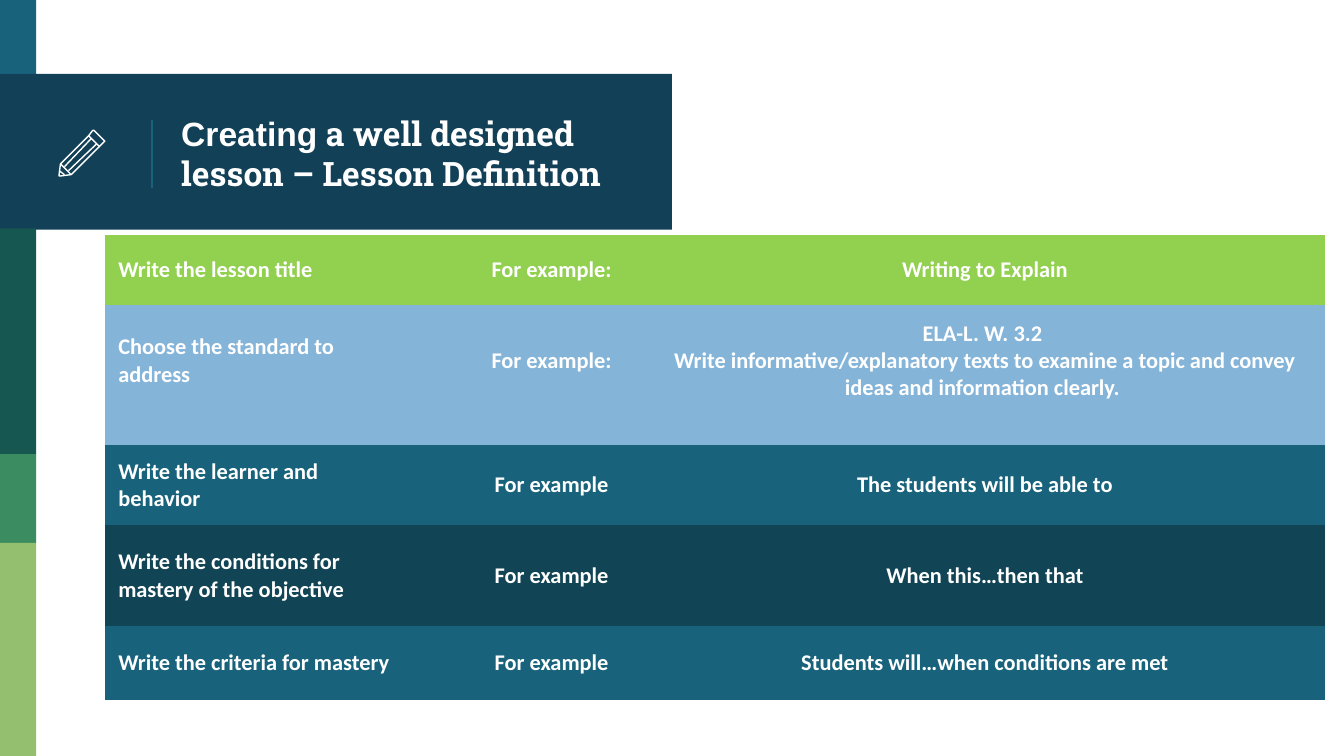
import pptx
import pptx.dml.color
import pptx.enum.shapes
import pptx.enum.text
import pptx.oxml.ns
import pptx.util
from lxml import etree

Inches = pptx.util.Inches
Pt = pptx.util.Pt
RGB = pptx.dml.color.RGBColor.from_string
qn = pptx.oxml.ns.qn
MIDDLE = pptx.enum.text.MSO_ANCHOR.MIDDLE
COLORS = {
    "white": "FFFFFF", "navy": "124057", "teal": "18637B", "pine": "165751",
    "green": "3B8D61", "sage": "94BF6E", "lime": "92D050", "sky": "85B4D9",
    "ink": "114454",
}

# Widescreen page, 16:9
deck = pptx.Presentation()
deck.slide_width = Inches(10)
deck.slide_height = Inches(10 * 9 / 16)
slide = deck.slides.add_slide(deck.slide_layouts[6])


def add_run(paragraph, text, font_name, size):
    run = paragraph.add_run()
    run.text = text
    for attribute, value in {"name": font_name, "size": Pt(size), "bold": True}.items():
        setattr(run.font, attribute, value)
    run.font.color.rgb = RGB(COLORS["white"])


def add_stroke(x1, y1, x2, y2, color):
    stroke = slide.shapes.add_connector(
        pptx.enum.shapes.MSO_CONNECTOR.STRAIGHT,
        Inches(x1), Inches(y1), Inches(x2), Inches(y2))
    stroke.line.color.rgb = RGB(COLORS[color])
    stroke.line.width = Pt(0.75)
    etree.SubElement(stroke.element.spPr, qn("a:effectLst"))


# Side stripe and title band: top, width, height, colour
for top, width, height, color in [
    (0, 0.27, 0.58, "teal"),
    (0.55, 5, 1.16, "navy"),
    (1.7, 0.27, 1.68, "pine"),
    (3.38, 0.27, 0.66, "green"),
    (4.04, 0.27, 1.59, "sage"),
]:
    band = slide.shapes.add_shape(
        pptx.enum.shapes.MSO_SHAPE.RECTANGLE,
        0, Inches(top), Inches(width), Inches(height))
    band.shadow.inherit = False
    band.fill.solid()
    band.fill.fore_color.rgb = RGB(COLORS[color])
    band.line.fill.background()

add_stroke(1.13, 0.89, 1.13, 1.4, "teal")

# Title
title = slide.shapes.add_textbox(Inches(1.25), Inches(0.58), Inches(3.51), Inches(1.12))
title_format = {"word_wrap": True, "vertical_anchor": MIDDLE}
for side in ("left", "right", "top", "bottom"):
    title_format[f"margin_{side}"] = Inches(0.1)
for attribute, value in title_format.items():
    setattr(title.text_frame, attribute, value)
heading = title.text_frame.paragraphs[0]
add_run(heading, "Creating", "Arial", 18)
add_run(heading, " a well designed lesson – Lesson Definition", "Roboto Slab", 18)

# Lesson table: height, colour, step, prompt, example paragraphs
lesson_rows = [
    (0.52, "lime", "Write the lesson title", "For example:", ["Writing to Explain"]),
    (1.04, "sky", "Choose the standard to address", "For example:",
     ["ELA-L. W. 3.2 ",
      "Write informative/explanatory texts to examine a topic and convey "
      "ideas and information clearly. "]),
    (0.6, "teal", "Write the learner and behavior", "For example",
     ["The students will be able to"]),
    (0.75, "ink", "Write the conditions for mastery of the objective", "For example",
     ["When this…then that"]),
    (0.55, "teal", "Write the criteria for mastery", "For example",
     ["Students will…when conditions are met"]),
]
column_widths = [2.27, 0.36, 1.39, 5.06]
lessons = slide.shapes.add_table(
    len(lesson_rows), len(column_widths), Inches(0.78), Inches(1.75),
    Inches(9.08), Inches(3.45)).table
for column, width in zip(lessons.columns, column_widths):
    column.width = Inches(width)

for row_index, (height, color, step, prompt, example) in enumerate(lesson_rows):
    lessons.rows[row_index].height = Inches(height)
    # The standard's text sits a little above the middle of its row
    cell_format = {
        "vertical_anchor": MIDDLE,
        "margin_left": Inches(0.1), "margin_right": Inches(0.1),
        "margin_top": Inches(0.07),
        "margin_bottom": Inches(0.28 if color == "sky" else 0.07),
    }
    for column_index, texts in enumerate([[step], [], [prompt], example]):
        cell = lessons.cell(row_index, column_index)
        cell.fill.solid()
        cell.fill.fore_color.rgb = RGB(COLORS[color])
        for attribute, value in cell_format.items():
            setattr(cell, attribute, value)
        # No borders; they come before the fill in the cell's properties
        properties = cell._tc.get_or_add_tcPr()
        for position, edge in enumerate(("lnL", "lnR", "lnT", "lnB")):
            border = etree.Element(qn(f"a:{edge}"))
            etree.SubElement(border, qn("a:noFill"))
            properties.insert(position, border)
        for text_index, text in enumerate(texts):
            frame = cell.text_frame
            paragraph = frame.add_paragraph() if text_index else frame.paragraphs[0]
            if column_index:
                paragraph.alignment = pptx.enum.text.PP_ALIGN.CENTER
            add_run(paragraph, text, "Calibri", 12)

# Pencil icon: outlines in hundredths of an inch, then straight strokes
eraser = [(77, 104), (71, 98), (70, 97), (69, 97), (66, 101), (74, 109), (77, 106), (78, 105)]
body = [(66, 101), (45, 122), (44, 130), (44, 131), (45, 131), (53, 130), (74, 109)]
for points, closed in [(eraser, True), (body, False)]:
    builder = slide.shapes.build_freeform(*points[0], scale=Inches(0.01))
    builder.add_line_segments(points[1:], close=closed)
    outline = builder.convert_to_shape()
    outline.shadow.inherit = False
    outline.fill.background()
    outline.line.color.rgb = RGB(COLORS["white"])
    outline.line.width = Pt(0.75)

for ends in [
    (0.72, 1.07, 0.51, 1.27),
    (0.48, 1.24, 0.68, 1.03),
    (0.48, 1.3, 0.44, 1.27),
    (0.45, 1.22, 0.53, 1.3),
]:
    add_stroke(*ends, "white")

deck.save("out.pptx")
